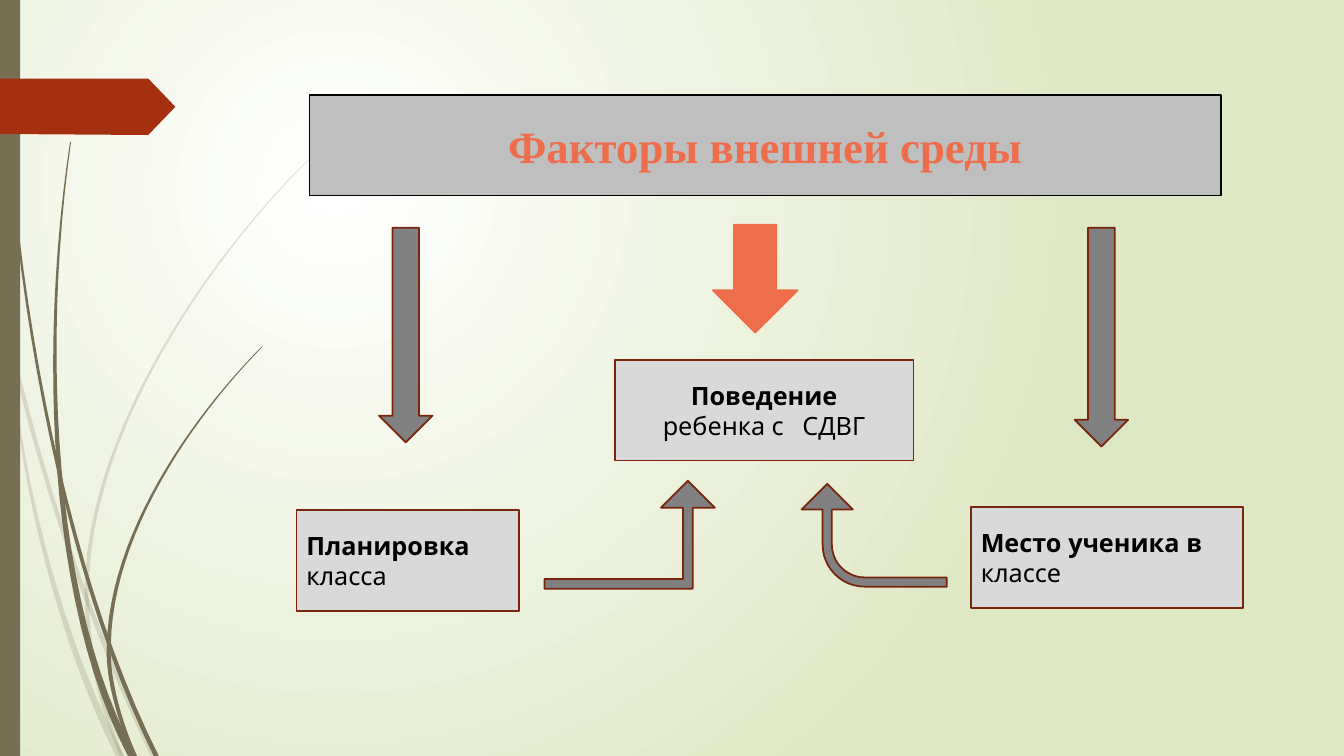
from dataclasses import dataclass

from pptx import Presentation
from pptx.dml.color import RGBColor
from pptx.enum.shapes import MSO_SHAPE
from pptx.enum.text import MSO_ANCHOR, MSO_AUTO_SIZE, PP_ALIGN
from pptx.oxml import parse_xml
from pptx.oxml.ns import nsdecls, qn
from pptx.util import Inches, Pt

RECT, DOWN = MSO_SHAPE.RECTANGLE, MSO_SHAPE.DOWN_ARROW
BENT, BENT_UP = MSO_SHAPE.BENT_ARROW, MSO_SHAPE.BENT_UP_ARROW
MIDDLE, NO_FIT = MSO_ANCHOR.MIDDLE, MSO_AUTO_SIZE.NONE
LEFT, CENTER = PP_ALIGN.LEFT, PP_ALIGN.CENTER

WIDTH, HEIGHT = Inches(13.33), Inches(7.5)
COL, ROW = WIDTH / 1333, HEIGHT / 750
STEPS = 24


@dataclass(frozen=True)
class Theme:
    glow: str = "FFFFFF"
    field: str = "DFE8C4"
    grass: str = "766F54"
    flag: str = "A53010"
    accent: str = "EE6E4B"
    banner: str = "BFBFBF"
    card: str = "D9D9D9"
    arrow: str = "808080"
    edge: str = "7A240C"
    ink: str = "000000"
    head_font: str = "Times New Roman"
    body_font: str = "League Spartan"
    head_size: int = 32
    body_size: int = 18
    stroke: float = 1.25


THEME = Theme()

PALE = [
    ((0, 290), (25, 420), (75, 590), (152, 750), 4, 5),
    ((11, 350), (20, 480), (62, 640), (119, 750), 1, 8),
    ((312, 153), (225, 235), (85, 420), (86, 590), 1, 4),
    ((86, 590), (86, 630), (95, 690), (121, 750), 4, 4),
]
DARK = [
    ((3, 0), (5, 260), (60, 560), (155, 750), 1, 5),
    ((70, 141), (40, 345), (50, 600), (131, 750), 1, 8),
    ((260, 344), (190, 415), (110, 530), (108, 640), 1, 4),
    ((108, 640), (106, 670), (118, 715), (134, 750), 4, 4),
]
FLAG = [(0, 78), (147, 78), (174, 106), (147, 134), (0, 133)]


def place(shape, left, top, wide, high):
    shape.left, shape.top = round(left * COL), round(top * ROW)
    shape.width, shape.height = round(wide * COL), round(high * ROW)


def paint(shape, fill, line=None):
    shape.shadow.inherit = False
    shape.fill.solid()
    shape.fill.fore_color.rgb = RGBColor.from_string(fill)
    if line:
        shape.line.color.rgb = RGBColor.from_string(line)
        shape.line.width = Pt(THEME.stroke)
    else:
        shape.line.fill.background()


def write(para, text, font, size, color, bold, align):
    para.alignment = align
    run = para.add_run()
    run.text = text
    run.font.name, run.font.size, run.font.bold = font, Pt(size), bold
    run.font.color.rgb = RGBColor.from_string(color)


def blade(a, b, c, d, thin, thick):
    near, far = [], []
    for step in range(STEPS + 1):
        t = step / STEPS
        u = 1 - t
        x, y = (u**3 * p + 3 * u * u * t * q + 3 * u * t * t * r + t**3 * s
                for p, q, r, s in zip(a, b, c, d))
        half = (thin * u + thick * t) / 2
        near.append((x - half, y))
        far.append((x + half, y))
    return near + far[::-1]


def trace(slide, points, color, alpha=100):
    spots = [(x * COL, y * ROW) for x, y in points]
    pen = slide.shapes.build_freeform(*spots[0], scale=1.0)
    pen.add_line_segments(spots[1:], close=True)
    shape = pen.convert_to_shape()
    paint(shape, color)
    if alpha < 100:
        tint = shape.element.spPr.find(qn("a:solidFill"))[0]
        tint.append(parse_xml(f'<a:alpha {nsdecls("a")} val="{alpha * 1000}"/>'))


def block(slide, kind, box, fill, line=None, turn=0, bends=()):
    shape = slide.shapes.add_shape(kind, 0, 0, 0, 0)
    place(shape, *box)
    paint(shape, fill, line)
    shape.rotation = turn
    for at, value in enumerate(bends):
        shape.adjustments[at] = value
    return shape


def card(slide, box, lead, rest, align=LEFT):
    frame = block(slide, RECT, box, THEME.card, THEME.edge).text_frame
    frame.word_wrap, frame.vertical_anchor = True, MIDDLE
    for para, text, bold in ((frame.paragraphs[0], lead, True),
                             (frame.add_paragraph(), rest, False)):
        write(para, text, THEME.body_font, THEME.body_size, THEME.ink, bold, align)


def banner(slide, box, text):
    title = slide.shapes.title
    place(title, *box)
    paint(title, THEME.banner, THEME.ink)
    frame = title.text_frame
    frame.auto_size, frame.vertical_anchor = NO_FIT, MIDDLE
    write(frame.paragraphs[0], text, THEME.head_font, THEME.head_size, THEME.accent, True, CENTER)
    title.element.getparent().append(title.element)


def backdrop(slide):
    fill = slide.background.fill
    fill.gradient()
    for stop, color in zip(fill.gradient_stops, (THEME.glow, THEME.field)):
        stop.color.rgb = RGBColor.from_string(color)
    grad = slide.element.find(".//" + qn("a:gradFill"))
    grad.replace(grad.find(qn("a:lin")), parse_xml(
        f'<a:path {nsdecls("a")} path="circle">'
        '<a:fillToRect l="50000" t="50000" r="100000" b="100000"/></a:path>'))
    for tuft, alpha in ((PALE, 20), (DARK, 100)):
        for stem in tuft:
            trace(slide, blade(*stem), THEME.grass, alpha)
    block(slide, RECT, (0, 0, 20, 750), THEME.grass)
    trace(slide, FLAG, THEME.flag)


def main():
    deck = Presentation()
    deck.slide_width, deck.slide_height = WIDTH, HEIGHT
    slide = deck.slides.add_slide(deck.slide_layouts[5])
    backdrop(slide)
    banner(slide, (307, 94, 904, 100), "Факторы внешней среды")
    block(slide, DOWN, (707, 223, 84, 107), THEME.accent, THEME.accent)
    for left, high in ((376, 213), (1066, 217)):
        block(slide, DOWN, (left, 226, 53, high), THEME.arrow, THEME.edge)
    card(slide, (610, 357, 296, 100), "Поведение", "ребенка с   СДВГ", CENTER)
    card(slide, (294, 506, 221, 100), "Планировка", "класса")
    card(slide, (963, 503, 270, 100), "Место ученика в", "классе")
    block(slide, BENT, (816, 459, 102, 144), THEME.arrow, THEME.edge, 270, (0.09, 0.25, 0.25, 0.41))
    block(slide, BENT_UP, (540, 477, 169, 107), THEME.arrow, THEME.edge, 0, (0.09, 0.25, 0.25))
    deck.save("out.pptx")


if __name__ == "__main__":
    main()
